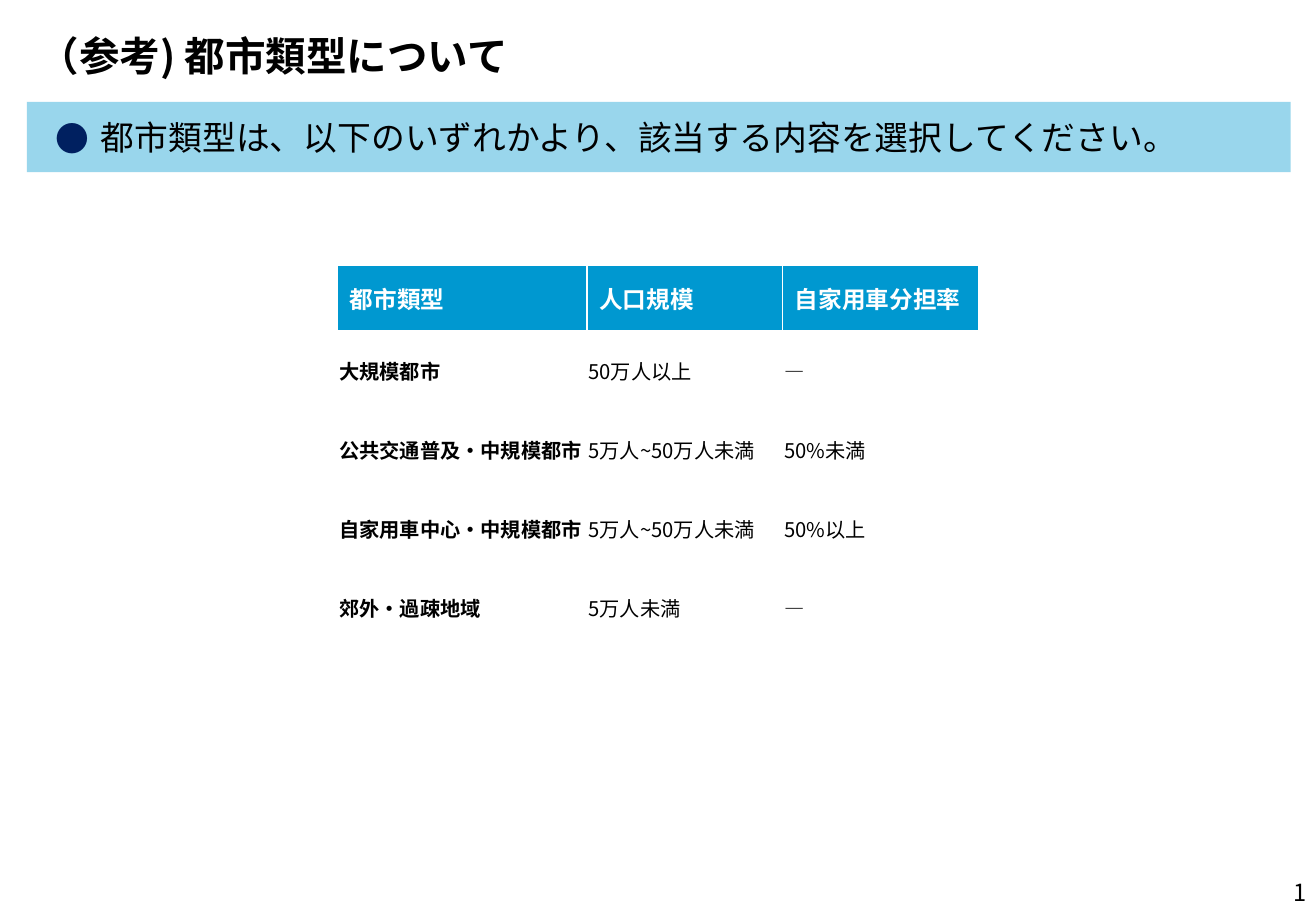
"""Build the reference slide that explains the city types."""
from lxml.etree import SubElement
from pptx import Presentation
from pptx.dml.color import RGBColor
from pptx.enum.text import MSO_ANCHOR, MSO_AUTO_SIZE, PP_ALIGN
from pptx.oxml.ns import qn
from pptx.util import Cm, Pt

FONT = "Noto Sans CJK JP"
BLACK, WHITE, BLUE, PALE_BLUE, NAVY = "000000", "FFFFFF", "0098D0", "99D6EC", "002060"
COLUMN_WIDTHS = (5.21, 4.09, 4.09)
ROW_HEIGHTS = (1.38, 1.65, 1.65, 1.65, 1.65)
CITY_TYPES = (
    ("都市類型", "人口規模", "自家用車分担率"),
    ("大規模都市", "50万人以上", "―"),
    ("公共交通普及・中規模都市", "5万人~50万人未満", "50%未満"),
    ("自家用車中心・中規模都市", "5万人~50万人未満", "50%以上"),
    ("郊外・過疎地域", "5万人未満", "―"),
)


def rgb(value):
    return RGBColor.from_string(value)


def set_attributes(target, values):
    for name, value in values.items():
        setattr(target, name, value)


def place(sp, left, top, width, height):
    set_attributes(sp, {"left": Cm(left), "top": Cm(top),
                        "width": Cm(width), "height": Cm(height)})


def write(tf, text, size, color=BLACK, bold=False, align=PP_ALIGN.LEFT):
    p = tf.paragraphs[0]
    set_attributes(p, {"alignment": align, "space_before": Pt(0)})
    r = p.add_run()
    r.text = text
    set_attributes(r.font, {"name": FONT, "size": Pt(size), "bold": bold})
    r.font.color.rgb = rgb(color)
    SubElement(r.font._element, qn("a:ea"), typeface=FONT)
    return p


def add_bullet(p, char, color, indent):
    pPr = p._p.get_or_add_pPr()
    pPr.set("marL", str(Cm(indent)))
    pPr.set("indent", str(-Cm(indent)))
    SubElement(SubElement(pPr, qn("a:buClr")), qn("a:srgbClr"), val=color)
    SubElement(pPr, qn("a:buFont"), typeface=FONT)
    SubElement(pPr, qn("a:buChar"), char=char)


def set_borders(cell, color):
    tcPr = cell._tc.get_or_add_tcPr()
    for side in ("lnL", "lnR", "lnT", "lnB"):
        ln = SubElement(tcPr, qn(f"a:{side}"), w=str(Pt(1)))
        SubElement(SubElement(ln, qn("a:solidFill")), qn("a:srgbClr"), val=color)


def fill_title(sp, text):
    place(sp, 0.56, 0.53, 26.42, 1.27)
    set_attributes(sp.text_frame, {"vertical_anchor": MSO_ANCHOR.MIDDLE,
                                   "auto_size": MSO_AUTO_SIZE.NONE})
    write(sp.text_frame, text, 24, bold=True)


def fill_body(sp, text):
    place(sp, 0.56, 2.13, 26.42, 1.47)
    sp.fill.solid()
    sp.fill.fore_color.rgb = rgb(PALE_BLUE)
    set_attributes(sp.text_frame, {
        "margin_left": Cm(0.6), "margin_right": Cm(0.6),
        "margin_top": Cm(0), "margin_bottom": Cm(0),
        "vertical_anchor": MSO_ANCHOR.MIDDLE, "auto_size": MSO_AUTO_SIZE.NONE})
    add_bullet(write(sp.text_frame, text, 20), "●", NAVY, 0.95)


def format_cell(cell, text, is_header, is_first):
    set_borders(cell, WHITE)
    cell.fill.solid()
    cell.fill.fore_color.rgb = rgb(BLUE if is_header else WHITE)
    cell.vertical_anchor = MSO_ANCHOR.MIDDLE
    if not is_header:
        set_attributes(cell, {"margin_left": Cm(0.03), "margin_right": Cm(0.03),
                              "margin_top": Cm(0.03), "margin_bottom": Cm(0)})
    write(cell.text_frame, text, 14 if is_header else 12,
          WHITE if is_header else BLACK, is_header or is_first)


def add_city_table(s):
    table = s.shapes.add_table(
        len(CITY_TYPES), len(COLUMN_WIDTHS), Cm(7.06), Cm(5.54),
        Cm(sum(COLUMN_WIDTHS)), Cm(sum(ROW_HEIGHTS))).table
    for column, width in zip(table.columns, COLUMN_WIDTHS):
        column.width = Cm(width)
    for i, (height, texts) in enumerate(zip(ROW_HEIGHTS, CITY_TYPES)):
        table.rows[i].height = Cm(height)
        for j, text in enumerate(texts):
            format_cell(table.cell(i, j), text, i == 0, j == 0)


def add_page_number(s, number):
    tf = s.shapes.add_textbox(Cm(21.13), Cm(18.14), Cm(6.43), Cm(1.02)).text_frame
    set_attributes(tf, {"word_wrap": True, "vertical_anchor": MSO_ANCHOR.MIDDLE})
    write(tf, number, 14, align=PP_ALIGN.RIGHT)


def main():
    prs = Presentation()
    set_attributes(prs, {"slide_width": Cm(27.51), "slide_height": Cm(19.05)})
    s = prs.slides.add_slide(prs.slide_layouts[1])
    fill_title(s.shapes.title, "（参考) 都市類型について")
    fill_body(s.placeholders[1],
              "都市類型は、以下のいずれかより、該当する内容を選択してください。")
    add_city_table(s)
    add_page_number(s, "1")
    prs.save("out.pptx")


if __name__ == "__main__":
    main()
